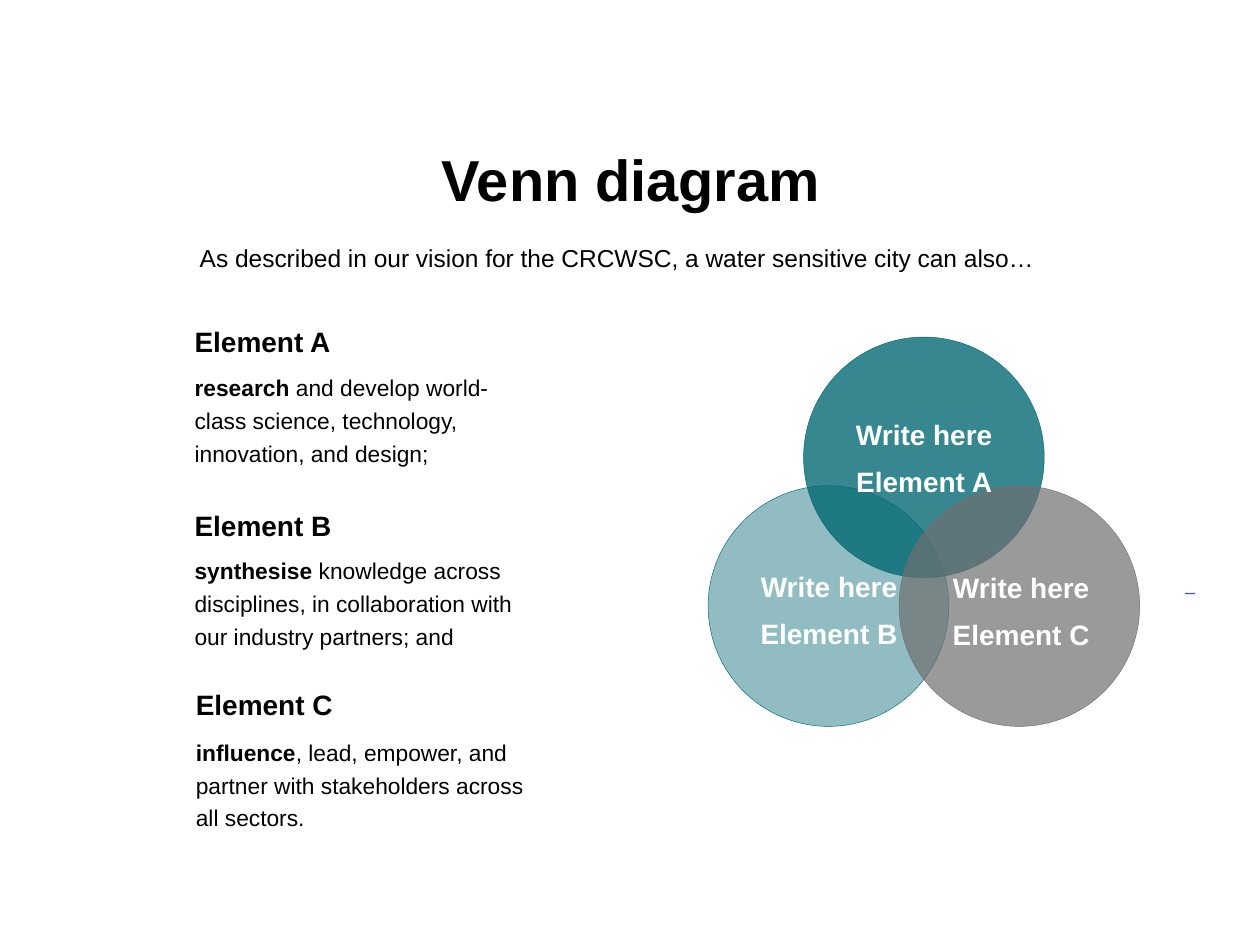
from pptx import Presentation
from pptx.dml.color import RGBColor
from pptx.enum.shapes import MSO_SHAPE
from pptx.enum.text import MSO_AUTO_SIZE, PP_ALIGN
from pptx.oxml.ns import qn
from pptx.util import Inches, Pt
from lxml import etree

OVAL = MSO_SHAPE.OVAL
ROUNDED = MSO_SHAPE.ROUNDED_RECTANGLE
GROW = MSO_AUTO_SIZE.SHAPE_TO_FIT_TEXT
LEFT, CENTER = PP_ALIGN.LEFT, PP_ALIGN.CENTER

THEME = {
    "font": "Arial",
    "ink": "000000", "light": "FFFFFF",
    "teal": "006772", "grey": "707070", "dash": "3F5799",
    "title": 66, "intro": 28, "heading": 32, "body": 26, "outline": 0.5,
}

TITLE = "Venn diagram"
INTRO = "As described in our vision for the CRCWSC, a water sensitive city can also…"
ELEMENTS = [
    {"name": "Element A", "keyword": "research",
     "detail": " and develop world-class science, technology, innovation, and design;",
     "left": 2.99, "heading_top": 5.11, "body_top": 5.8},
    {"name": "Element B", "keyword": "synthesise",
     "detail": " knowledge across disciplines, in collaboration with our industry partners; and",
     "left": 2.99, "heading_top": 8.02, "body_top": 8.71},
    {"name": "Element C", "keyword": "influence",
     "detail": ", lead, empower, and partner with stakeholders across all sectors.",
     "left": 3.01, "heading_top": 10.87, "body_top": 11.59},
]
PROMPT = "Write here"
CIRCLES = [
    {"name": "Element B", "top": 7.71, "color": "teal", "opacity": 43, "caption": (11.81, 8.77)},
    {"name": "Element A", "top": 5.35, "color": "teal", "opacity": 79, "caption": (13.32, 6.37)},
    {"name": "Element C", "top": 7.71, "color": "grey", "opacity": 70, "caption": (14.86, 8.79)},
]
VENN_LEFT, VENN_STEP, DIAMETER = 11.24, 1.515, 3.82

prs = Presentation()
prs.slide_width, prs.slide_height = Inches(20), Inches(15)
slide = prs.slides.add_slide(prs.slide_layouts[6])


def rgb(key):
    return RGBColor.from_string(THEME[key])


def add_text(paragraphs, box, size, color="ink", align=LEFT, spacing=None, wrap=True):
    frame = slide.shapes.add_textbox(*map(Inches, box)).text_frame
    frame.word_wrap = wrap
    frame.auto_size = GROW
    for index, runs in enumerate(paragraphs):
        paragraph = frame.add_paragraph() if index else frame.paragraphs[0]
        paragraph.alignment = align
        paragraph.line_spacing = spacing
        for words, bold in runs:
            run = paragraph.add_run()
            run.text = words
            run.font.name = THEME["font"]
            run.font.size = Pt(THEME[size])
            run.font.bold = bold
            run.font.color.rgb = rgb(color)


def add_filled(preset, box, color):
    shape = slide.shapes.add_shape(preset, *map(Inches, box))
    shape.shadow.inherit = False
    shape.fill.solid()
    shape.fill.fore_color.rgb = rgb(color)
    return shape


def add_circle(box, color, opacity):
    circle = add_filled(OVAL, box, color)
    circle.line.color.rgb = rgb(color)
    circle.line.width = Pt(THEME["outline"])
    fill_color = circle.fill._xPr.find(qn("a:solidFill"))[0]
    etree.SubElement(fill_color, qn("a:alpha")).set("val", str(opacity * 1000))


for order, circle in enumerate(CIRCLES):
    left = VENN_LEFT + order * VENN_STEP
    add_circle((left, circle["top"], DIAMETER, DIAMETER), circle["color"], circle["opacity"])

dash = add_filled(ROUNDED, (18.81, 9.41, 0.16, 0.02), "dash")
dash.adjustments[0] = 0.5
dash.line.fill.background()

for circle in CIRCLES:
    add_text([[(PROMPT, True)], [(circle["name"], True)]], (*circle["caption"], 2.7, 1.57),
             "heading", color="light", align=CENTER, spacing=1.4)

for element in ELEMENTS:
    add_text([[(element["keyword"], True), (element["detail"], False)]],
             (element["left"], element["body_top"], 5.59, 1.66), "body", spacing=1.2)
    add_text([[(element["name"], True)]],
             (element["left"], element["heading_top"], 4.3, 0.64), "heading")

add_text([[(TITLE, True)]], (6.88, 2.24, 6.27, 1.21), "title", align=CENTER, wrap=False)
add_text([[(INTRO, False)]], (2.38, 3.71, 14.81, 0.65), "intro", align=CENTER, spacing=1.2)

prs.save("out.pptx")
